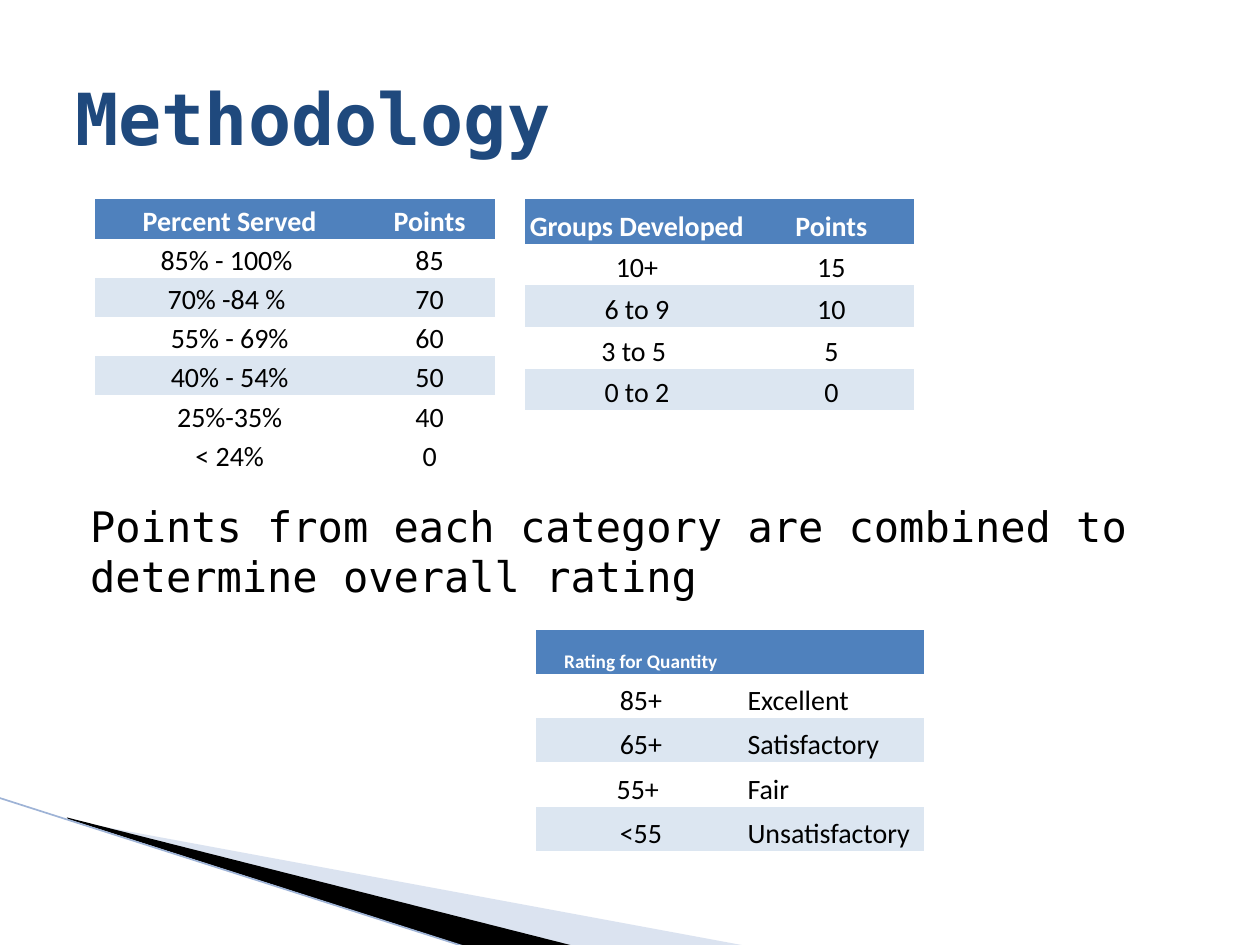
from lxml import etree
from pptx import Presentation
from pptx.dml.color import RGBColor
from pptx.enum.shapes import MSO_CONNECTOR
from pptx.enum.text import MSO_ANCHOR, PP_ALIGN
from pptx.oxml.ns import qn
from pptx.util import Cm, Pt

LEFT, CENTER = PP_ALIGN.LEFT, PP_ALIGN.CENTER
MIDDLE, BOTTOM = MSO_ANCHOR.MIDDLE, MSO_ANCHOR.BOTTOM
STRAIGHT = MSO_CONNECTOR.STRAIGHT

MONO, SANS = "DejaVu Sans Mono", "Calibri"
BLACK, WHITE, NAVY = "000000", "FFFFFF", "1F497D"
HEADER, BAND, PALE, EDGE = "4F81BD", "DCE6F1", "A7B9DB", "9EB3D6"
NO_GRID_STYLE = "{2D5ABB26-0587-4C30-8999-92F81FD0307C}"

# Content: lengths in cm
TITLE = "Methodology"
SUMMARY = "Points from each category are combined to determine overall rating"

TABLES = [
    dict(at=(1.91, 4.02), widths=(5.44, 2.62), heights=(0.79, 0.79),
         header_size=16, aligns=(CENTER, CENTER), rows=[
             ("Percent Served", "Points"),
             ("85% - 100% ", "85"),
             ("70% -84 % ", "70"),
             ("55% - 69%", "60"),
             ("40% - 54%", "50"),
             ("25%-35%", "40"),
             ("< 24%", "0")]),
    dict(at=(10.58, 4.02), widths=(4.52, 3.32), heights=(0.89, 0.84),
         header_size=16, aligns=(CENTER, CENTER), rows=[
             ("Groups Developed", "Points"),
             ("10+", "15"),
             ("6 to 9", "10"),
             ("3 to 5 ", "5"),
             ("0 to 2", "0")]),
    dict(at=(10.8, 12.7), widths=(4.24, 3.58), heights=(0.89, 0.89),
         header_size=11, aligns=(CENTER, LEFT), rows=[
             ("Rating for Quantity", ""),
             ("85+", "Excellent"),
             ("65+", "Satisfactory"),
             ("55+ ", "Fair"),
             ("<55", "Unsatisfactory")]),
]
BANDED_ROWS = (2, 4)

# Corner wedges: points, colour, opacity in percent
WEDGES = [
    ([(1.4, 16.54), (15.11, 19.08), (11.58, 19.08), (1.4, 16.51)], PALE, 40),
    ([(1.35, 16.48), (11.61, 19.08), (9.45, 19.1), (1.37, 16.51)], BLACK, 100),
]
EDGE_LINE = (-0.03, 16.08, 9.42, 19.1)


def color(value):
    return RGBColor.from_string(value)


def add_span(para, text, size, font, ink, bold=False):
    span = para.add_run()
    span.text = text
    span.font.size = Pt(size)
    span.font.name = font
    span.font.bold = bold
    span.font.color.rgb = color(ink)


def add_text(page, area, text, size, ink, bold=False, anchor=None):
    box = page.shapes.add_textbox(*map(Cm, area))
    frame = box.text_frame
    frame.word_wrap = True
    if anchor is not None:
        frame.vertical_anchor = anchor
    add_span(frame.paragraphs[0], text, size, MONO, ink, bold)


def add_wedge(page, points, ink, opacity):
    corners = [(Cm(x), Cm(y)) for x, y in points]
    builder = page.shapes.build_freeform(*corners[0], scale=1.0)
    builder.add_line_segments(corners[1:], close=True)
    wedge = builder.convert_to_shape()
    wedge.shadow.inherit = False
    wedge.line.fill.background()
    wedge.fill.solid()
    wedge.fill.fore_color.rgb = color(ink)
    if opacity < 100:
        fill_color = next(wedge.element.spPr.iter(qn("a:srgbClr")))
        etree.SubElement(fill_color, qn("a:alpha"), val=str(opacity * 1000))


def add_points_table(page, at, widths, heights, header_size, aligns, rows):
    header_height, row_height = heights
    total_height = header_height + row_height * (len(rows) - 1)
    frame = page.shapes.add_table(len(rows), len(widths), Cm(at[0]), Cm(at[1]),
                                  Cm(sum(widths)), Cm(total_height))
    next(frame.element.iter(qn("a:tableStyleId"))).text = NO_GRID_STYLE
    table = frame.table
    for column, width in zip(table.columns, widths):
        column.width = Cm(width)
    for r, values in enumerate(rows):
        is_header = r == 0
        table.rows[r].height = Cm(header_height if is_header else row_height)
        for c, text in enumerate(values):
            cell = table.cell(r, c)
            cell.margin_left = cell.margin_right = cell.margin_top = Cm(0.03)
            cell.margin_bottom = 0
            cell.vertical_anchor = BOTTOM
            if is_header or r in BANDED_ROWS:
                cell.fill.solid()
                cell.fill.fore_color.rgb = color(HEADER if is_header else BAND)
            else:
                cell.fill.background()
            if text:
                para = cell.text_frame.paragraphs[0]
                para.alignment = CENTER if is_header else aligns[c]
                add_span(para, text, header_size if is_header else 16, SANS,
                         WHITE if is_header else BLACK, is_header)


def main():
    deck = Presentation()
    deck.slide_width, deck.slide_height = Cm(25.4), Cm(19.05)
    page = deck.slides.add_slide(deck.slide_layouts[6])

    # Corner decoration
    for points, ink, opacity in WEDGES:
        add_wedge(page, points, ink, opacity)
    edge = page.shapes.add_connector(STRAIGHT, *map(Cm, EDGE_LINE))
    edge.line.color.rgb = color(EDGE)
    edge.line.width = Pt(0.95)
    etree.SubElement(edge.element.spPr, qn("a:effectLst"))

    # Title and summary
    add_text(page, (1.27, 0.76, 22.86, 3.18), TITLE, 41, NAVY, True, MIDDLE)
    add_text(page, (1.57, 9.96, 22.56, 2.3), SUMMARY, 24, BLACK)

    # Points and rating tables
    for table in TABLES:
        add_points_table(page, **table)

    deck.save("out.pptx")


if __name__ == "__main__":
    main()
